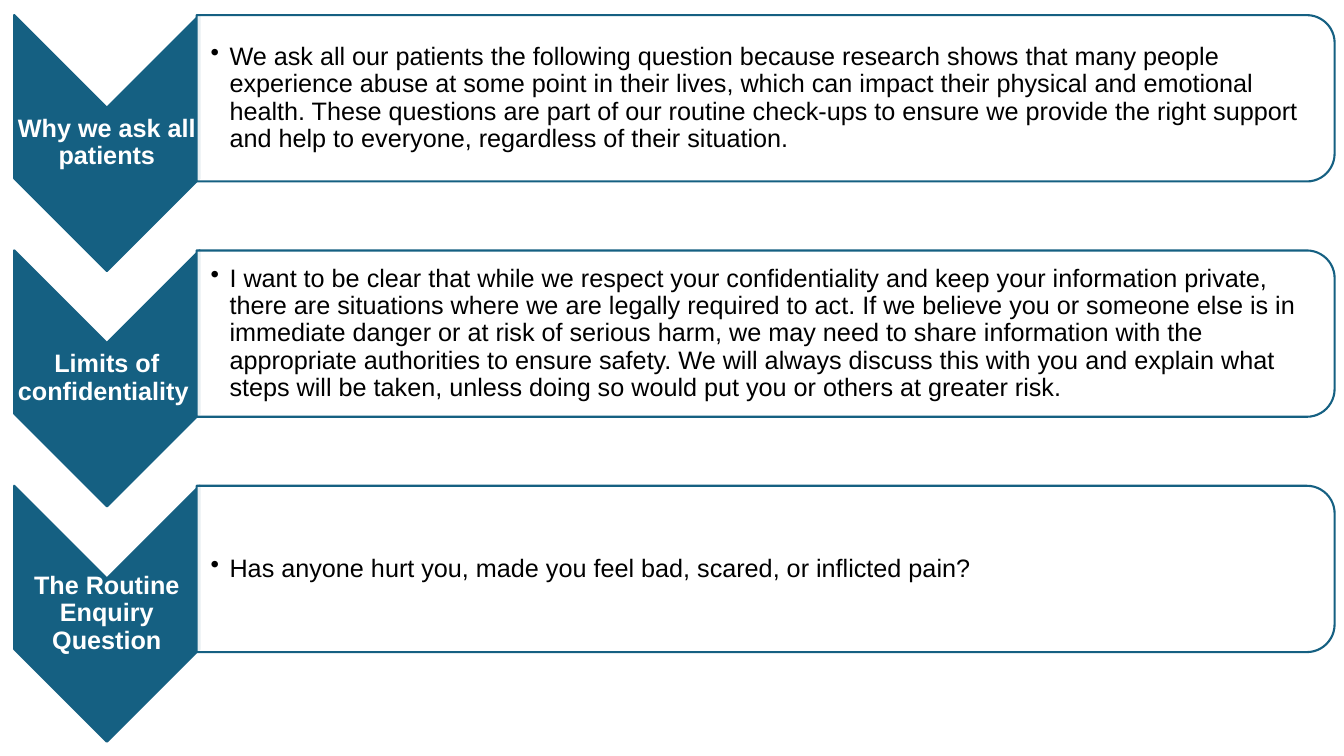
import pptx
import pptx.util
import pptx.dml.color
import pptx.enum.shapes
import pptx.enum.text
import pptx.oxml.ns
import lxml.etree

Pt = pptx.util.Pt
SHAPES = pptx.enum.shapes.MSO_SHAPE
ALIGN = pptx.enum.text.PP_ALIGN

STEPS = [
    ("Why we ask all patients",
     "We ask all our patients the following question because research shows that many people "
     "experience abuse at some point in their lives, which can impact their physical and emotional "
     "health. These questions are part of our routine check-ups to ensure we provide the right "
     "support and help to everyone, regardless of their situation."),
    ("Limits of confidentiality ",
     "I want to be clear that while we respect your confidentiality and keep your information "
     "private, there are situations where we are legally required to act. If we believe you or "
     "someone else is in immediate danger or at risk of serious harm, we may need to share "
     "information with the appropriate authorities to ensure safety. We will always discuss this "
     "with you and explain what steps will be taken, unless doing so would put you or others at "
     "greater risk."),
    ("The Routine Enquiry Question",
     "Has anyone hurt you, made you feel bad, scared, or inflicted pain?"),
]
COLORS = {"blue": "156082", "white": "FFFFFF", "black": "000000"}
FONT = "Arial"
TEXT_SIZE = 18

SLIDE_WIDTH, SLIDE_HEIGHT = 960, 540
ROW_PITCH = 168.1
CHEVRON_LEFT, CHEVRON_WIDTH, CHEVRON_HEIGHT = 10.1, 132.5, 182.9
CHEVRON_MIDDLE = 102.2
LABEL_HEIGHT = 50.4
PANEL_LEFT, PANEL_WIDTH, PANEL_HEIGHT = 140.4, 812.9, 118.8
PANEL_MIDDLE = 70.2
PANEL_TEXT_WIDTH, PANEL_TEXT_HEIGHT = 807.1, 107.3
BULLET_INDENT = 13.5


def color(name):
    return pptx.dml.color.RGBColor.from_string(COLORS[name])


def add_turned_shape(slide, kind, left, middle, width, height, fill):
    center = left + width / 2
    shape = slide.shapes.add_shape(
        kind, Pt(center - height / 2), Pt(middle - width / 2), Pt(height), Pt(width))
    shape.rotation = 90
    shape.shadow.inherit = False
    shape.fill.solid()
    shape.fill.fore_color.rgb = color(fill)
    shape.line.color.rgb = color("blue")
    shape.line.width = Pt(1.5)
    return shape


def set_opacity(shape, percent):
    tag = pptx.oxml.ns.qn("a:srgbClr")
    fill_color = shape.fill._xPr.find(pptx.oxml.ns.qn("a:solidFill")).find(tag)
    alpha = lxml.etree.SubElement(fill_color, pptx.oxml.ns.qn("a:alpha"))
    alpha.set("val", str(percent * 1000))


def add_bullet(paragraph):
    properties = paragraph._p.get_or_add_pPr()
    properties.set("marL", str(Pt(BULLET_INDENT)))
    properties.set("indent", str(-Pt(BULLET_INDENT)))
    bullet = lxml.etree.SubElement(properties, pptx.oxml.ns.qn("a:buChar"))
    bullet.set("char", "•")


def add_text(slide, text, left, middle, width, height, inset, ink, label):
    box = slide.shapes.add_textbox(Pt(left), Pt(middle - height / 2), Pt(width), Pt(height))
    frame = box.text_frame
    frame.word_wrap = True
    frame.vertical_anchor = pptx.enum.text.MSO_ANCHOR.MIDDLE
    frame.margin_left = Pt(inset)
    frame.margin_top = frame.margin_right = frame.margin_bottom = Pt(0.9)
    paragraph = frame.paragraphs[0]
    if label:
        paragraph.alignment = ALIGN.CENTER
    else:
        paragraph.level = 1
        paragraph.alignment = ALIGN.LEFT
        add_bullet(paragraph)
    paragraph.line_spacing = 0.9
    paragraph.space_after = Pt(TEXT_SIZE * (0.35 if label else 0.15))
    run = paragraph.add_run()
    run.text = text
    run.font.name = FONT
    run.font.size = Pt(TEXT_SIZE)
    run.font.bold = label
    run.font.color.rgb = color(ink)


def main():
    presentation = pptx.Presentation()
    presentation.slide_width = Pt(SLIDE_WIDTH)
    presentation.slide_height = Pt(SLIDE_HEIGHT)
    slide = presentation.slides.add_slide(presentation.slide_layouts[6])

    for row, (label, explanation) in enumerate(STEPS):
        chevron_middle = CHEVRON_MIDDLE + row * ROW_PITCH
        panel_middle = PANEL_MIDDLE + row * ROW_PITCH
        add_turned_shape(slide, SHAPES.CHEVRON, CHEVRON_LEFT, chevron_middle,
                         CHEVRON_WIDTH, CHEVRON_HEIGHT, "blue")
        add_text(slide, label, CHEVRON_LEFT, chevron_middle,
                 CHEVRON_WIDTH, LABEL_HEIGHT, 0.9, "white", True)
        panel = add_turned_shape(slide, SHAPES.ROUND_2_SAME_RECTANGLE, PANEL_LEFT, panel_middle,
                                 PANEL_WIDTH, PANEL_HEIGHT, "white")
        set_opacity(panel, 90)
        add_text(slide, explanation, PANEL_LEFT, panel_middle,
                 PANEL_TEXT_WIDTH, PANEL_TEXT_HEIGHT, 10.1, "black", False)

    presentation.save("out.pptx")


if __name__ == "__main__":
    main()
